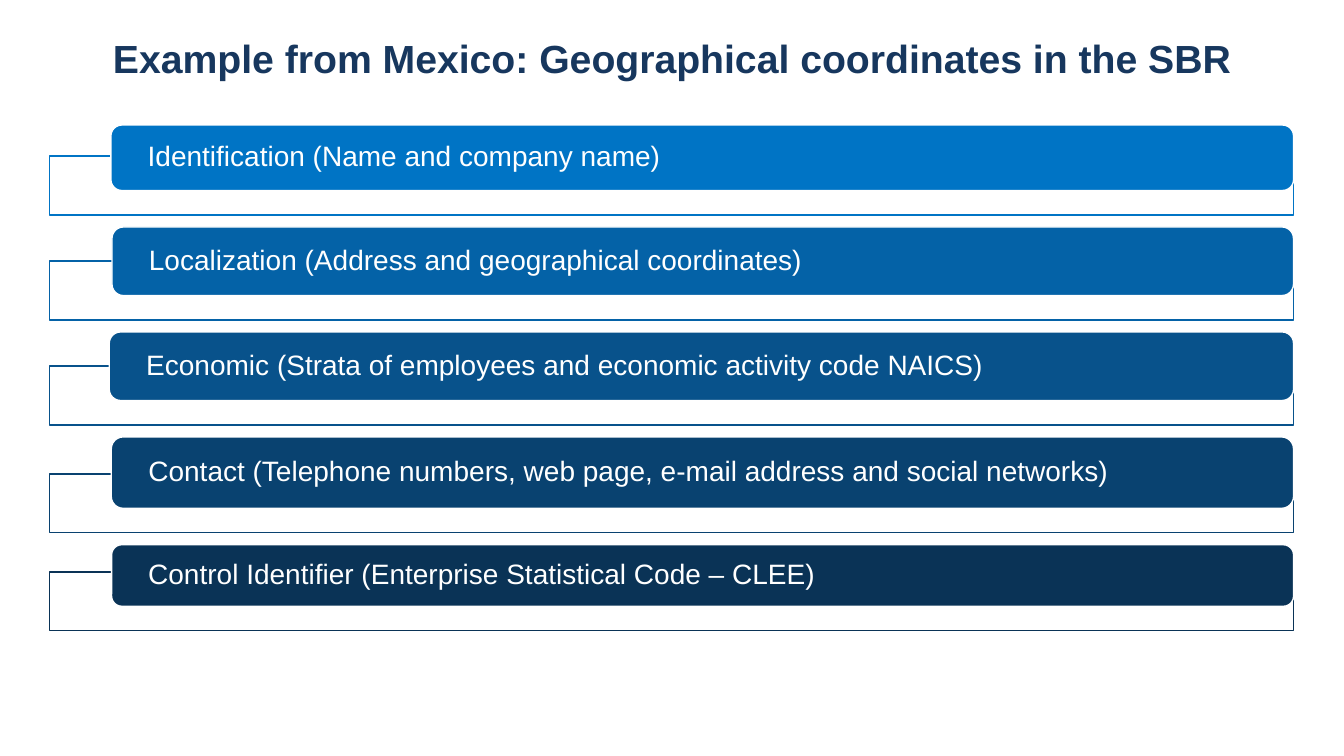
from dataclasses import dataclass

from lxml.etree import SubElement
from pptx import Presentation
from pptx.dml.color import RGBColor
from pptx.enum.shapes import MSO_SHAPE as Shape
from pptx.enum.text import MSO_ANCHOR as Anchor, PP_ALIGN as Align
from pptx.oxml.ns import qn
from pptx.util import Pt


@dataclass(frozen=True)
class Theme:
    font: str = "Arial"
    title_size: int = 28
    bar_size: int = 20
    title: str = "17375E"
    white: str = "FFFFFF"


theme = Theme()


def add_box(slide, kind, left, top, width, height, fill, line):
    shape = slide.shapes.add_shape(kind, Pt(left), Pt(top), Pt(width), Pt(height))
    shape.shadow.inherit = False
    shape.fill.solid()
    shape.fill.fore_color.rgb = RGBColor.from_string(fill)
    shape.line.color.rgb = RGBColor.from_string(line)
    shape.line.width = Pt(1)
    return shape


def write_line(text_frame, text, size, color, align, bold=False):
    text_frame.text = text
    text_frame.word_wrap = True
    text_frame.vertical_anchor = Anchor.MIDDLE
    paragraph = text_frame.paragraphs[0]
    paragraph.alignment = align
    font = paragraph.runs[0].font
    font.name = theme.font
    font.size = Pt(size)
    font.bold = bold
    font.color.rgb = RGBColor.from_string(color)


presentation = Presentation()
presentation.slide_width, presentation.slide_height = Pt(960), Pt(540)
slide = presentation.slides.add_slide(presentation.slide_layouts[5])

title = slide.shapes.title
title.left, title.top, title.width, title.height = Pt(0), Pt(21), Pt(960), Pt(41)
write_line(title.text_frame, "Example from Mexico: Geographical coordinates in the SBR",
           theme.title_size, theme.title, Align.CENTER, bold=True)

# Text, colour, left edge and height of each bar
sections = [
    ("Identification (Name and company name)", "0074C5", 79.2, 46.8),
    ("Localization (Address and geographical coordinates)", "0462A7", 80, 49),
    ("Economic (Strata of employees and economic activity code NAICS)", "08528B", 78, 49),
    ("Contact (Telephone numbers, web page, e-mail address and social networks)",
     "094270", 79.5, 51),
    ("Control Identifier (Enterprise Statistical Code – CLEE)", "0A3356", 79.7, 44),
]
frame_left, frame_height, right_edge = 35.4, 42, 924
frame_drop, section_gap = 17.4, 8.6

bar_top = 89.3
for text, color, bar_left, bar_height in sections:
    frame_bottom = bar_top + bar_height + frame_drop
    frame = add_box(slide, Shape.RECTANGLE, frame_left, frame_bottom - frame_height,
                    right_edge - frame_left, frame_height, theme.white, color)
    frame_color = frame.fill._xPr.find(qn("a:solidFill"))[0]
    SubElement(frame_color, qn("a:alpha"), val="90000")

    bar = add_box(slide, Shape.ROUNDED_RECTANGLE, bar_left, bar_top,
                  right_edge - bar_left, bar_height, color, theme.white)
    text_frame = bar.text_frame
    text_frame.margin_left = text_frame.margin_right = Pt(24)
    text_frame.margin_top = text_frame.margin_bottom = Pt(0)
    write_line(text_frame, text, theme.bar_size, theme.white, Align.LEFT)
    text_frame.paragraphs[0].line_spacing = 0.9

    bar_top = frame_bottom + section_gap

presentation.save("out.pptx")
